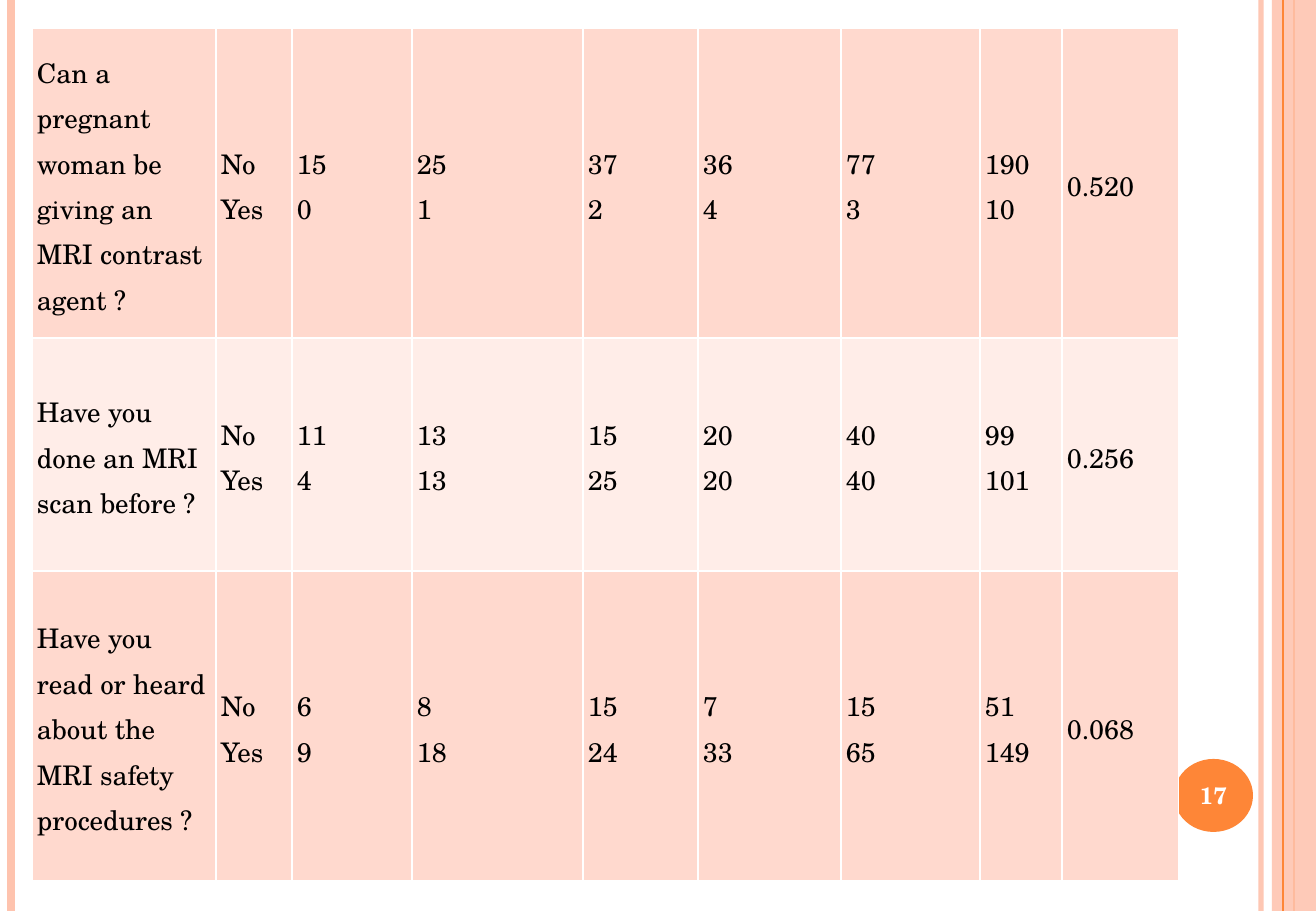
import pptx
import pptx.util
import pptx.dml.color
import pptx.enum.shapes
import pptx.enum.text
import pptx.oxml
import pptx.oxml.ns

SCALE = 914400 / 121.5
WIDE, HIGH = 1316, 911
FONT = "TeX Gyre Schola"
PEACH, ORANGE, WHITE, BLACK = "FEC3AE", "FE8637", "FFFFFF", "000000"
BANDS = ["FFD9CE", "FFEDE8"]
COLS = [184, 76, 120, 171, 115, 143, 139, 82, 117]
ROWS = [310, 233, 310]
ANSWERS = ["No", "Yes"]
# Question, counts for No, counts for Yes, p-value
SURVEY = [
    ("Can a pregnant woman be giving an MRI contrast agent ?",
     [15, 25, 37, 36, 77, 190], [0, 1, 2, 4, 3, 10], "0.520"),
    ("Have you done an MRI scan before ?",
     [11, 13, 15, 20, 40, 99], [4, 13, 25, 20, 40, 101], "0.256"),
    ("Have you read or heard about the MRI safety procedures ?",
     [6, 8, 15, 7, 15, 51], [9, 18, 24, 33, 65, 149], "0.068"),
]


def px(size):
    return pptx.util.Emu(round(size * SCALE))


def color(code):
    return pptx.dml.color.RGBColor.from_string(code)


def fade(part, percent):
    """Set the opacity of the colour inside a shape or connector."""
    tone = part._element.spPr.find(".//" + pptx.oxml.ns.qn("a:srgbClr"))
    alpha = pptx.oxml.parse_xml(
        f'<a:alpha {pptx.oxml.ns.nsdecls("a")} val="{percent * 1000}"/>')
    tone.append(alpha)


def stripe(slide, x, top, height, code, points):
    link = slide.shapes.add_connector(
        pptx.enum.shapes.MSO_CONNECTOR.STRAIGHT,
        px(x), px(top), px(x), px(top + height))
    link.line.color.rgb = color(code)
    link.line.width = pptx.util.Pt(points)
    link._element.spPr.append(pptx.oxml.parse_xml(
        f'<a:effectLst {pptx.oxml.ns.nsdecls("a")}/>'))
    return link


def block(slide, kind, box, code):
    shape = slide.shapes.add_shape(kind, *map(px, box))
    shape.shadow.inherit = False
    shape.fill.solid()
    shape.fill.fore_color.rgb = color(code)
    shape.line.fill.background()
    return shape


def write(para, text, size, code, bold=False):
    run = para.add_run()
    run.text = text
    run.font.name = FONT
    run.font.size = pptx.util.Pt(size)
    run.font.bold = bold
    run.font.color.rgb = color(code)


def frame(slide, box):
    """Draw the vertical stripes at both slide edges."""
    left, top, width, height = box
    right = left + width
    fade(stripe(slide, right - 55, top, height, PEACH, 3), 93)
    stripe(slide, left + 11, top, height, PEACH, 4.5)
    stripe(slide, right - 22, top, height, ORANGE, 1.5)
    band = block(slide, pptx.enum.shapes.MSO_SHAPE.RECTANGLE,
                 (right - 44, top, 44, height), PEACH)
    fade(band, 87)
    stripe(slide, right - 33, top, height, ORANGE, 0.75)


def badge(slide, box, number):
    left, top, width, height = box
    block(slide, pptx.enum.shapes.MSO_SHAPE.OVAL, box, ORANGE)
    label = slide.shapes.add_textbox(
        px(left - 4), px(top + 2), px(width + 8), px(height - 4))
    text = label.text_frame
    text.word_wrap = True
    text.vertical_anchor = pptx.enum.text.MSO_ANCHOR.MIDDLE
    para = text.paragraphs[0]
    para.alignment = pptx.enum.text.PP_ALIGN.CENTER
    write(para, number, 14, WHITE, True)


def edge(cell):
    """Give a cell thin white borders on all sides."""
    props = cell._tc.get_or_add_tcPr()
    for spot, side in enumerate("LRTB"):
        props.insert(spot, pptx.oxml.parse_xml(
            f'<a:ln{side} {pptx.oxml.ns.nsdecls("a")} w="12700">'
            f'<a:solidFill><a:srgbClr val="{WHITE}"/></a:solidFill>'
            f'</a:ln{side}>'))


def fill(cell, lines, code):
    cell.fill.solid()
    cell.fill.fore_color.rgb = color(code)
    edge(cell)
    cell.margin_left = cell.margin_right = px(5)
    cell.margin_top = cell.margin_bottom = 0
    cell.vertical_anchor = pptx.enum.text.MSO_ANCHOR.MIDDLE
    text = cell.text_frame
    for spot, line in enumerate(lines):
        para = text.add_paragraph() if spot else text.paragraphs[0]
        para.alignment = pptx.enum.text.PP_ALIGN.LEFT
        para.line_spacing = 1.15
        write(para, str(line), 16, BLACK)


def results(slide, left, top):
    """Place the survey table with its corner at left, top."""
    grid = slide.shapes.add_table(
        len(ROWS), len(COLS), px(left), px(top),
        px(sum(COLS)), px(sum(ROWS))).table
    grid.first_row = grid.horz_banding = False
    for col, width in zip(grid.columns, COLS):
        col.width = px(width)
    for row, height in zip(grid.rows, ROWS):
        row.height = px(height)
    for r, (question, no, yes, value) in enumerate(SURVEY):
        cells = [[question], ANSWERS, *zip(no, yes), [value]]
        for c, lines in enumerate(cells):
            fill(grid.cell(r, c), lines, BANDS[r % 2])


def main():
    deck = pptx.Presentation()
    deck.slide_width, deck.slide_height = px(WIDE), px(HIGH)
    slide = deck.slides.add_slide(deck.slide_layouts[6])
    frame(slide, (0, 0, WIDE, HIGH))
    badge(slide, (1174, 759, 79, 73), "17")
    results(slide, 32, 28)
    deck.save("out.pptx")


if __name__ == "__main__":
    main()
